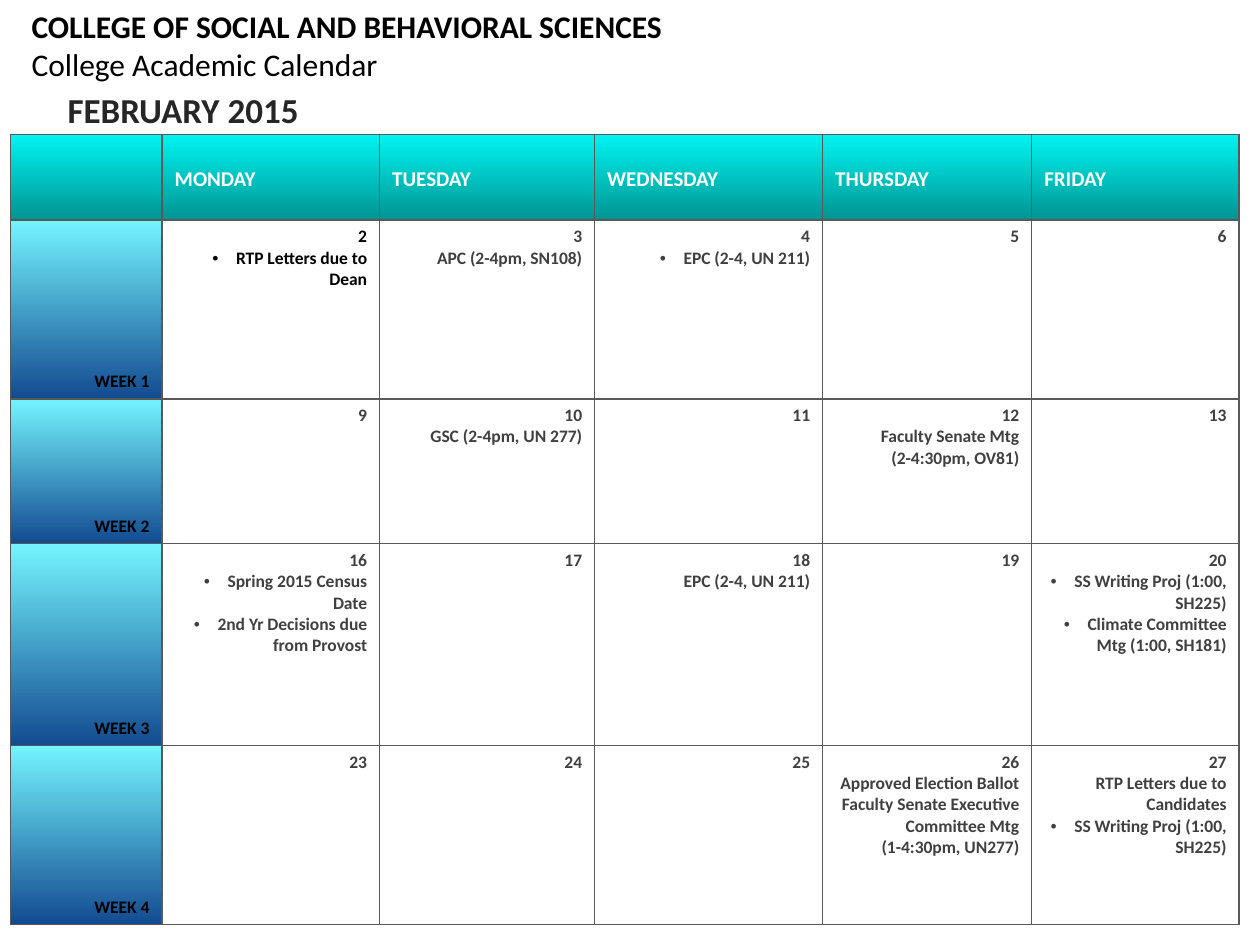
from lxml.etree import SubElement
from pptx import Presentation
from pptx.dml.color import RGBColor
from pptx.enum.text import MSO_ANCHOR as Anchor, MSO_AUTO_SIZE as Auto, PP_ALIGN as Align
from pptx.oxml import parse_xml
from pptx.oxml.ns import nsdecls, qn
from pptx.util import Pt

FONT = "Calibri"
BLACK = RGBColor(0, 0, 0)
WHITE = RGBColor(255, 255, 255)
GREY = RGBColor(0x40, 0x40, 0x40)
DARK = RGBColor(0x26, 0x26, 0x26)
EDGE = RGBColor(0x59, 0x59, 0x59)
TEAL = (RGBColor(0x00, 0xF3, 0xF0), RGBColor(0x00, 0x95, 0x93))
BLUE = (RGBColor(0x74, 0xF4, 0xFF), RGBColor(0x12, 0x4B, 0x90))

TITLE = ("COLLEGE OF SOCIAL AND BEHAVIORAL SCIENCES", "College Academic Calendar")
MONTH = "FEBRUARY 2015"
DAYS = ("MONDAY", "TUESDAY", "WEDNESDAY", "THURSDAY", "FRIDAY")
FIRST = 2  # date of the first Monday
# Events by date; a leading "•" marks a bulleted one, "\v" breaks the line
EVENTS = {
    2: ["•RTP Letters due to Dean"],
    3: ["APC (2-4pm, SN108)"],
    4: ["•EPC (2-4, UN 211)"],
    10: ["GSC (2-4pm, UN 277)"],
    12: ["Faculty Senate Mtg\v(2-4:30pm, OV81)"],
    16: ["•Spring 2015 Census Date", "•2nd Yr Decisions due from Provost"],
    18: ["EPC (2-4, UN 211)"],
    20: ["•SS Writing Proj (1:00, SH225)", "•Climate Committee Mtg (1:00, SH181)"],
    26: ["Approved Election Ballot",
         "Faculty Senate Executive Committee Mtg\v(1-4:30pm, UN277)"],
    27: ["RTP Letters due to Candidates", "•SS Writing Proj (1:00, SH225)"],
}
BOLD_DATES = {2}  # dates set in black
COLS = (86.6, 124.3, 122.9, 130.3, 119.5, 118.5)
ROWS = (48.7, 102.2, 82.8, 115.4, 102.2)


def style(para, size, color, bold=True, align=Align.LEFT):
    para.alignment = align
    font = para.font
    font.name, font.size, font.bold = FONT, Pt(size), bold
    font.color.rgb = color


def bullet(para):
    props = para._p.get_or_add_pPr()
    props.set("marL", str(Pt(13.5)))
    props.set("indent", str(-Pt(13.5)))
    SubElement(props, qn("a:buFont")).set("typeface", "Arial")
    SubElement(props, qn("a:buChar")).set("char", "•")


def write(cell, lines, size, color, align):
    frame = cell.text_frame
    for i, line in enumerate(lines):
        para = frame.add_paragraph() if i else frame.paragraphs[0]
        para.text = line.lstrip("•")
        if line.startswith("•"):
            bullet(para)
        style(para, size, color, align=align)


def shade(cell, stops):
    cell.fill.gradient()
    cell.fill.gradient_angle = 270
    for stop, color in zip(cell.fill.gradient_stops, stops):
        stop.color.rgb = color


def border(cell):
    props = cell._tc.get_or_add_tcPr()
    for i, side in enumerate("LRTB"):
        props.insert(i, parse_xml(
            f'<a:ln{side} {nsdecls("a")} w="{Pt(1)}"><a:solidFill>'
            f'<a:srgbClr val="{EDGE}"/></a:solidFill></a:ln{side}>'))


def add_title(slide):
    box = slide.shapes.title
    box.left, box.top, box.width, box.height = Pt(18), Pt(3), Pt(361.5), Pt(45)
    frame = box.text_frame
    frame.auto_size, frame.word_wrap = Auto.NONE, True
    frame.vertical_anchor = Anchor.MIDDLE
    frame.margin_left = frame.margin_right = 0
    frame.text = "\n".join(TITLE)
    for para, bold in zip(frame.paragraphs, (True, False)):
        style(para, 18, BLACK, bold)


def add_month(slide):
    frame = slide.shapes.add_textbox(Pt(31.5), Pt(47), Pt(148.5), Pt(31.5)).text_frame
    frame.word_wrap = False
    frame.text = MONTH
    style(frame.paragraphs[0], 20, DARK)


def add_calendar(slide):
    table = slide.shapes.add_table(len(ROWS), len(COLS), Pt(6), Pt(77),
                                   Pt(sum(COLS)), Pt(sum(ROWS))).table
    for col, width in zip(table.columns, COLS):
        col.width = Pt(width)
    for row, height in zip(table.rows, ROWS):
        row.height = Pt(height)
    for r in range(len(ROWS)):
        for c in range(len(COLS)):
            cell = table.cell(r, c)
            if r == 0:
                shade(cell, TEAL)
                cell.margin_top = Pt(18)
                if c:
                    write(cell, [DAYS[c - 1]], 12, WHITE, Align.LEFT)
            elif c == 0:
                shade(cell, BLUE)
                cell.vertical_anchor = Anchor.BOTTOM
                write(cell, [f"WEEK {r}"], 10, BLACK, Align.RIGHT)
            else:
                cell.fill.solid()
                cell.fill.fore_color.rgb = WHITE
                date = FIRST + 7 * (r - 1) + c - 1
                color = BLACK if date in BOLD_DATES else GREY
                write(cell, [str(date), *EVENTS.get(date, [])], 10, color, Align.RIGHT)
            border(cell)


def main():
    deck = Presentation()
    deck.slide_width, deck.slide_height = Pt(720), Pt(540)
    slide = deck.slides.add_slide(deck.slide_layouts[5])
    add_calendar(slide)
    add_month(slide)
    add_title(slide)
    deck.save("out.pptx")


if __name__ == "__main__":
    main()
